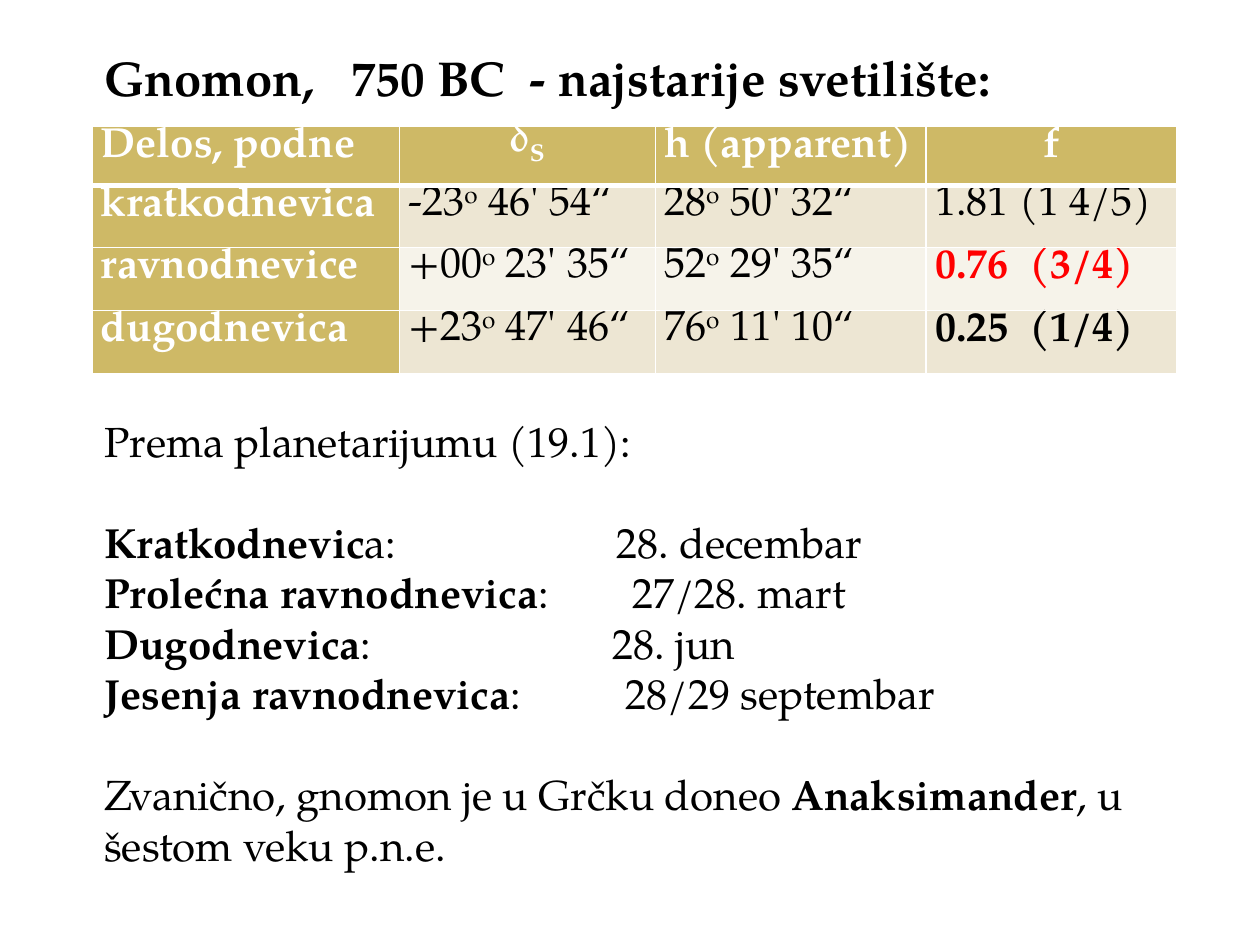
from pptx import Presentation, util as u
from pptx.dml.color import RGBColor
from pptx.enum import text
from pptx.oxml import parse_xml
from pptx.oxml.ns import nsdecls

FONT = "TeX Gyre Pagella"
BLACK, WHITE, RED = "000000", "FFFFFF", "FF0000"
GOLD, DARK_BAND, LIGHT_BAND = "CEB966", "EDE6D3", "F6F3EA"
SUPER, SUB = 30, -25
LEFT = 1.85

# A run is (text, bold, baseline shift in percent).
TITLE = [("Gnomon,   750 BC  - najstarije svetilište:", True, 0)]
HEADER = [
    [("Delos, podne", True, 0)],
    [("δ", True, 0), ("S", True, SUB)],
    [("h (apparent)", True, 0)],
    [("f", True, 0)],
]
# Name, declination, altitude, shadow ratio, its boldness and colour
EVENTS = [
    ("kratkodnevica", ("-23", " 46' 54“"), ("28", " 50' 32“"), "1.81 (1 4/5)", False, BLACK),
    ("ravnodnevice", ("+00", " 23' 35“"), ("52", " 29' 35“"), "0.76  (3/4)", True, RED),
    ("dugodnevica", ("+23", " 47' 46“"), ("76", " 11' 10“"), "0.25  (1/4)", True, BLACK),
]
COLUMN_WIDTHS = [6.2, 5.16, 5.46, 5.05]
ROW_HEIGHTS = [1.2, 1.25, 1.27, 1.27]

INTRO = [("Prema planetarijumu (19.1):", False, 0)]
# Bold label, plain rest, date, date position
DATES = [
    ("Kratkodnevic", "a:", "28. decembar", 10.33),
    ("Prolećna ravnodnevica", ":", "27/28. mart", 10.65),
    ("Dugodnevica", ":", "28. jun", 10.25),
    ("Jesenja ravnodnevica", ":", "28/29 septembar", 10.52),
]
CLOSING = [
    ("Zvanično, gnomon je u Grčku doneo ", False, 0),
    ("Anaksimander", True, 0),
    (", u šestom veku p.n.e.", False, 0),
]


def rgb(value):
    return RGBColor.from_string(value)


def add_runs(paragraph, runs, color=BLACK, size=24):
    for content, bold, baseline in runs:
        run = paragraph.add_run()
        run.text = content
        font = run.font
        font.name, font.size, font.bold = FONT, u.Pt(size), bold
        font.color.rgb = rgb(color)
        if baseline:
            font._element.set("baseline", str(baseline * 1000))


def add_text_frame(slide, top, width, height):
    box = slide.shapes.add_textbox(u.Cm(LEFT), u.Cm(top), u.Cm(width), u.Cm(height))
    box.text_frame.word_wrap = True
    return box.text_frame


def set_borders(cell, bottom_width):
    """Draw white cell borders; they must precede the fill in the XML."""
    properties = cell._tc.get_or_add_tcPr()
    for index, side in enumerate("LRTB"):
        width = u.Pt(bottom_width if side == "B" else 1)
        properties.insert(index, parse_xml(
            f'<a:ln{side} {nsdecls("a")} w="{width}"><a:solidFill>'
            f'<a:srgbClr val="{WHITE}"/></a:solidFill></a:ln{side}>'))


def fill_cell(cell, runs, color, background, alignment, bottom_width=1):
    cell.margin_left = cell.margin_right = u.Cm(0.18)
    cell.margin_top, cell.margin_bottom = u.Pt(12), 0
    cell.fill.solid()
    cell.fill.fore_color.rgb = rgb(background)
    set_borders(cell, bottom_width)
    paragraph = cell.text_frame.paragraphs[0]
    paragraph.alignment = alignment
    paragraph.line_spacing = u.Pt(12)
    add_runs(paragraph, runs, color)


def angle(degrees, rest):
    return [(degrees, False, 0), ("o", False, SUPER), (rest, False, 0)]


def add_shadow_table(slide):
    table = slide.shapes.add_table(
        len(ROW_HEIGHTS), len(COLUMN_WIDTHS), u.Cm(LEFT), u.Cm(2.54),
        u.Cm(sum(COLUMN_WIDTHS)), u.Cm(sum(ROW_HEIGHTS))).table
    for column, width in zip(table.columns, COLUMN_WIDTHS):
        column.width = u.Cm(width)
    for row, height in zip(table.rows, ROW_HEIGHTS):
        row.height = u.Cm(height)

    justify, center = text.PP_ALIGN.JUSTIFY, text.PP_ALIGN.CENTER
    for index, runs in enumerate(HEADER):
        alignment = center if index % 2 else justify
        fill_cell(table.cell(0, index), runs, WHITE, GOLD, alignment, bottom_width=3)
    for row, (name, declination, altitude, ratio, bold, color) in enumerate(EVENTS, 1):
        band = DARK_BAND if row % 2 else LIGHT_BAND
        cells = [
            ([(name, True, 0)], WHITE, GOLD),
            (angle(*declination), BLACK, band),
            (angle(*altitude), BLACK, band),
            ([(ratio, bold, 0)], color, band),
        ]
        for column, (runs, text_color, background) in enumerate(cells):
            fill_cell(table.cell(row, column), runs, text_color, background, justify)


def add_tab_stop(paragraph, position):
    paragraph._p.get_or_add_pPr().append(parse_xml(
        f'<a:tabLst {nsdecls("a")}><a:tab pos="{u.Cm(position)}" algn="l"/></a:tabLst>'))


def add_dates(slide):
    frame = add_text_frame(slide, 8.25, 22.07, 11.53)
    add_runs(frame.paragraphs[0], INTRO)
    for index, (label, rest, date, position) in enumerate(DATES):
        paragraph = frame.add_paragraph()
        if index == 0:
            paragraph.space_before = u.Pt(29)
        add_tab_stop(paragraph, position)
        add_runs(paragraph, [(label, True, 0), (f"{rest}\t{date}", False, 0)])
    paragraph = frame.add_paragraph()
    paragraph.space_before = u.Pt(29)
    add_runs(paragraph, CLOSING)


def main():
    presentation = Presentation()
    presentation.slide_width, presentation.slide_height = u.Cm(25.4), u.Cm(19.05)
    slide = presentation.slides.add_slide(presentation.slide_layouts[6])
    title = add_text_frame(slide, 0.84, 22.43, 3.84)
    add_runs(title.paragraphs[0], TITLE, size=28)
    add_shadow_table(slide)
    add_dates(slide)
    presentation.save("out.pptx")


if __name__ == "__main__":
    main()
